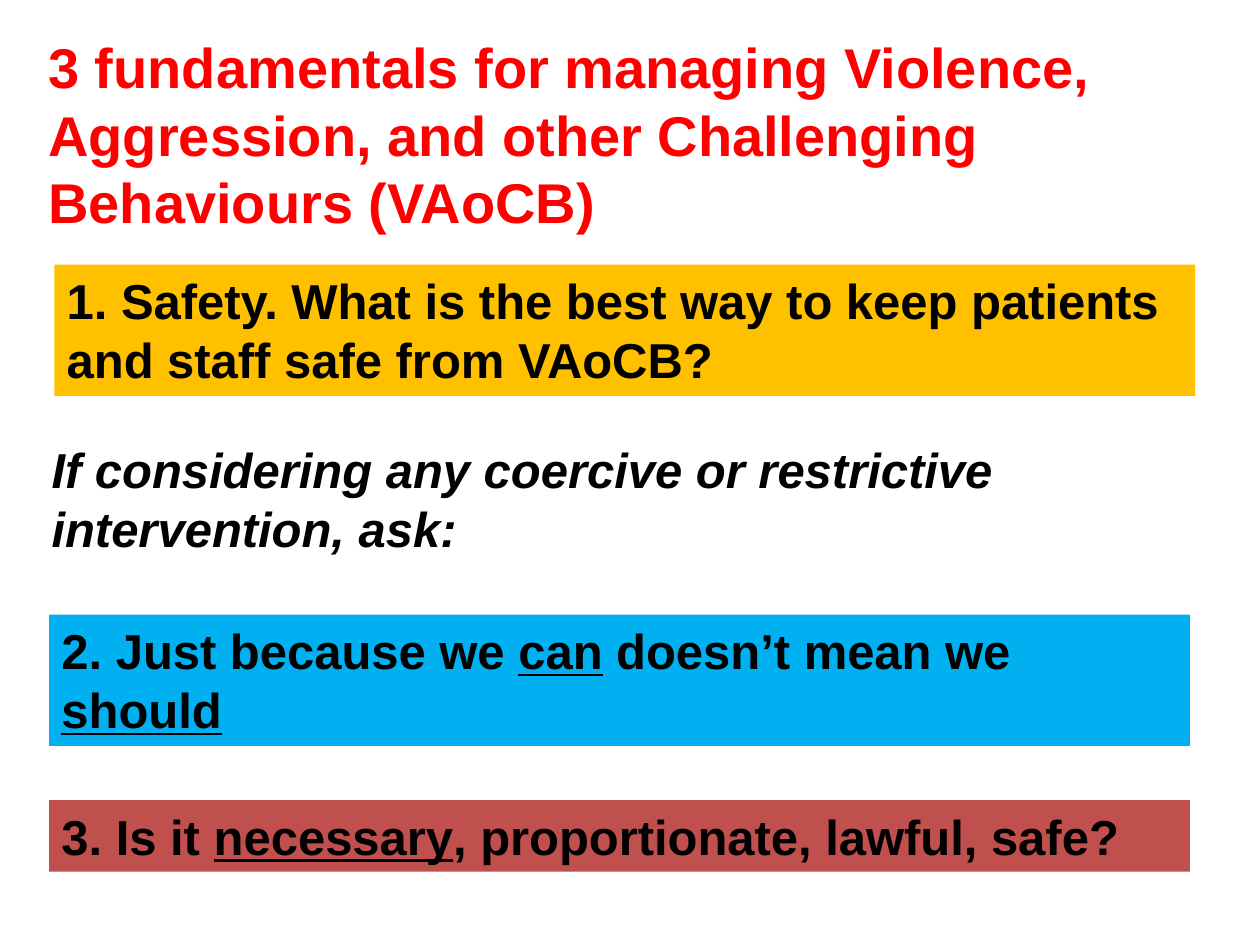
"""Build the slide on three fundamentals for managing challenging behaviours."""
from dataclasses import dataclass

from pptx import Presentation
from pptx import util as u
from pptx.dml import color as c
from pptx.enum import shapes, text

FONT = "Arial"
BLACK = "000000"
RED = "FF0000"


@dataclass(frozen=True)
class Banner:
    left: float
    top: float
    height: float
    fill: str
    phrases: tuple[str, ...]
    underlined: tuple[str, ...] = ()


BANNERS = (
    Banner(31, 151.2, 75, "FFC000",
           ("1. Safety. What is the best way to keep patients and staff safe from VAoCB?",)),
    Banner(28, 351.2, 75, "00B0F0",
           ("2. Just because we ", "can", " doesn’t mean we ", "should"), ("can", "should")),
    Banner(28, 457.2, 41, "C0504D",
           ("3. Is it ", "necessary", ", proportionate, lawful, safe?"), ("necessary",)),
)


def rgb(value: str) -> c.RGBColor:
    """Turn a hex string into a colour."""
    return c.RGBColor.from_string(value)


def place(shape, left: float, top: float, width: float, height: float) -> None:
    """Move and size a shape in points."""
    shape.left, shape.top = u.Pt(left), u.Pt(top)
    shape.width, shape.height = u.Pt(width), u.Pt(height)


def format_text(shape, size: float, hex_color: str, italic: bool = False) -> None:
    """Give all text in a shape the slide's bold left-aligned style."""
    frame = shape.text_frame
    frame.word_wrap = True
    frame.auto_size = text.MSO_AUTO_SIZE.NONE
    frame.vertical_anchor = text.MSO_ANCHOR.TOP
    for paragraph in frame.paragraphs:
        paragraph.alignment = text.PP_ALIGN.LEFT
        for run in paragraph.runs:
            run.font.name = FONT
            run.font.size = u.Pt(size)
            run.font.bold = True
            run.font.italic = italic
            run.font.color.rgb = rgb(hex_color)


def add_banner(slide, banner: Banner) -> None:
    """Draw one filled banner with its underlined words."""
    shape = slide.shapes.add_shape(
        shapes.MSO_SHAPE.RECTANGLE,
        u.Pt(banner.left), u.Pt(banner.top), u.Pt(652), u.Pt(banner.height))
    shape.shadow.inherit = False
    shape.fill.solid()
    shape.fill.fore_color.rgb = rgb(banner.fill)
    shape.line.fill.background()
    paragraph = shape.text_frame.paragraphs[0]
    for phrase in banner.phrases:
        run = paragraph.add_run()
        run.text = phrase
        run.font.underline = phrase in banner.underlined
    format_text(shape, 28, BLACK)


def main() -> None:
    """Assemble and save the presentation."""
    presentation = Presentation()
    presentation.slide_width, presentation.slide_height = u.Pt(720), u.Pt(540)
    slide = presentation.slides.add_slide(presentation.slide_layouts[5])

    title = slide.shapes.title
    place(title, 20.4, 15.2, 675, 124)
    title.text_frame.text = ("3 fundamentals for managing Violence, Aggression, "
                             "and other Challenging Behaviours (VAoCB)")
    format_text(title, 32, RED)

    for banner in BANNERS:
        add_banner(slide, banner)

    prompt = slide.shapes.add_textbox(u.Pt(22.4), u.Pt(247.6), u.Pt(657), u.Pt(75))
    prompt.text_frame.text = "If considering any coercive or restrictive intervention, ask:"
    format_text(prompt, 28, BLACK, italic=True)

    presentation.save("out.pptx")


if __name__ == "__main__":
    main()
